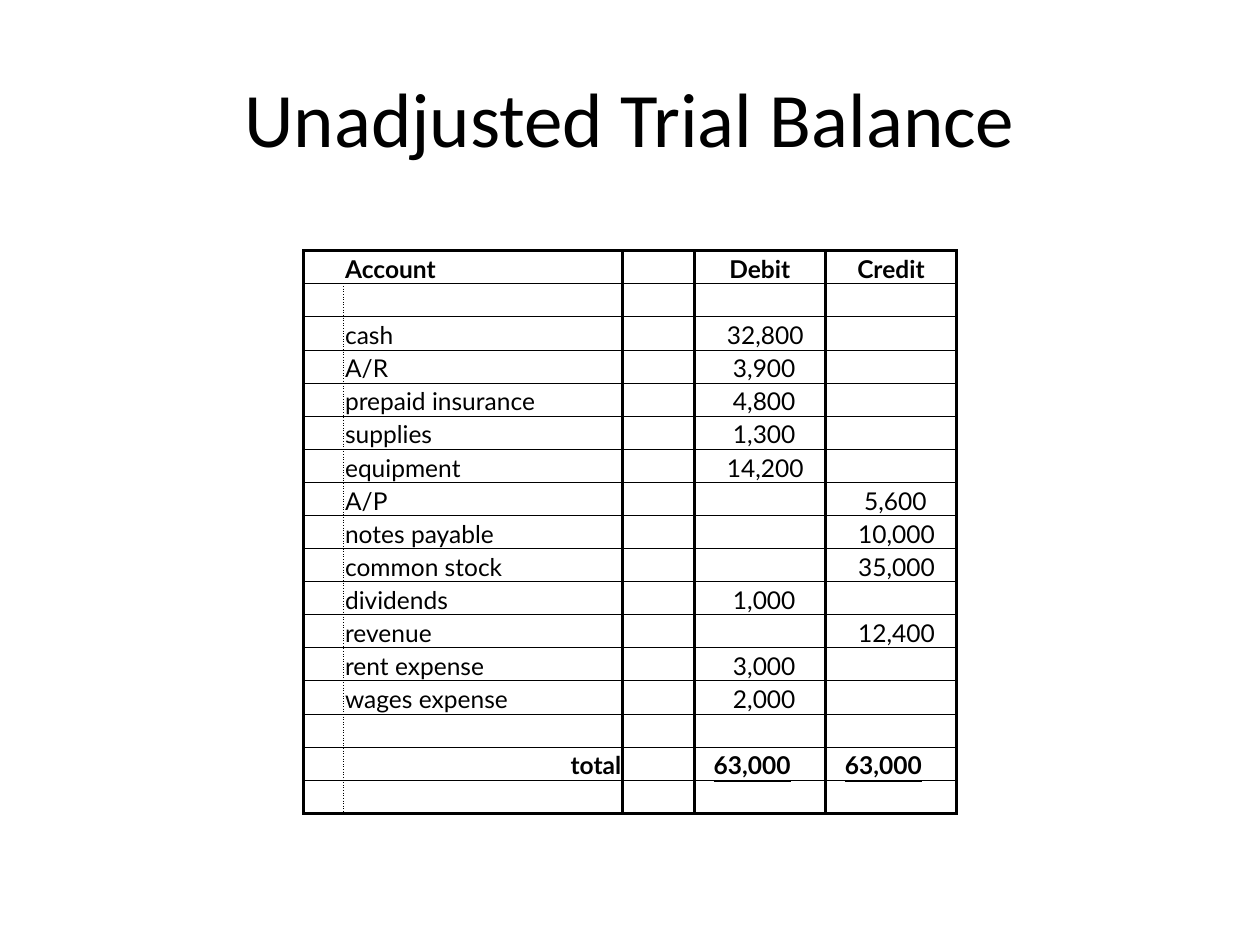
"""Build the unadjusted trial balance slide."""
import dataclasses

import lxml.etree
import pptx
import pptx.dml.color
import pptx.enum.text
import pptx.oxml.ns
import pptx.util

Pt = pptx.util.Pt
Align = pptx.enum.text.PP_ALIGN
Anchor = pptx.enum.text.MSO_ANCHOR


@dataclasses.dataclass(frozen=True)
class Theme:
    ink: str = "000000"
    head: str = "Calibri"
    body: str = "Lato"
    large: float = 44
    small: float = 14
    thick: float = 2
    thin: float = 0.5


THEME = Theme()
LEFT, TOP = 173.5, 143.25
WIDTHS = [23, 159.2, 41, 75, 75]
HEIGHT = 18.93
DEBIT, CREDIT = 3, 4
ITEMS = [
    ("cash", DEBIT, "32,800"),
    ("A/R", DEBIT, "3,900"),
    ("prepaid insurance", DEBIT, "4,800"),
    ("supplies", DEBIT, "1,300"),
    ("equipment", DEBIT, "14,200"),
    ("A/P", CREDIT, "5,600"),
    ("notes payable", CREDIT, "10,000"),
    ("common stock", CREDIT, "35,000"),
    ("dividends", DEBIT, "1,000"),
    ("revenue", CREDIT, "12,400"),
    ("rent expense", DEBIT, "3,000"),
    ("wages expense", DEBIT, "2,000"),
]
TOTAL = "63,000"
FIRST = 2
SUM = FIRST + len(ITEMS) + 1
COUNT = SUM + 2


def sub(node, tag, **attrs):
    """Add a drawing element with attributes and return it."""
    return lxml.etree.SubElement(node, pptx.oxml.ns.qn(tag), **attrs)


def write(frame, text, font=THEME.body, size=THEME.small, bold=False,
          under=False, align=Align.LEFT, indent=0):
    """Put formatted text in a frame."""
    para = frame.paragraphs[0]
    para.alignment = align
    if indent:
        para._p.get_or_add_pPr().set("marL", str(Pt(indent)))
    run = para.add_run()
    run.text = text
    run.font.name = font
    run.font.size = Pt(size)
    run.font.bold = bold
    run.font.underline = under
    run.font.color.rgb = pptx.dml.color.RGBColor.from_string(THEME.ink)


def edge(props, side, width, dash="solid"):
    """Draw one cell border, or hide it when the width is zero."""
    line = sub(props, f"a:ln{side}", w=str(Pt(width)))
    if not width:
        sub(line, "a:noFill")
        return
    fill = sub(line, "a:solidFill")
    sub(fill, "a:srgbClr", val=THEME.ink)
    sub(line, "a:prstDash", val=dash)


def frame(cell, row, col):
    """Set the borders, margins and fill of a cell."""
    props = cell._tc.get_or_add_tcPr()
    split = (THEME.thin, "dot") if row else (0,)
    bold = (THEME.thick,)
    edge(props, "L", *(split if col == 1 else bold))
    edge(props, "R", *(split if col == 0 else bold))
    edge(props, "T", THEME.thin if row else THEME.thick)
    edge(props, "B", THEME.thick if row == COUNT - 1 else THEME.thin)
    cell.fill.background()
    cell.vertical_anchor = Anchor.BOTTOM
    cell.margin_left = cell.margin_right = cell.margin_top = Pt(0.7)
    cell.margin_bottom = 0


def ledger(slide):
    """Add the ruled table and return it."""
    shape = slide.shapes.add_table(
        COUNT, len(WIDTHS), Pt(LEFT), Pt(TOP), Pt(sum(WIDTHS)),
        Pt(HEIGHT * COUNT))
    table = shape.table
    table.first_row = table.horz_banding = False
    for col, width in zip(table.columns, WIDTHS):
        col.width = Pt(width)
    for r, row in enumerate(table.rows):
        row.height = Pt(HEIGHT)
        for c, cell in enumerate(row.cells):
            frame(cell, r, c)
    return table


def fill(table):
    """Write the heads, accounts and totals."""
    def put(row, col, text, **form):
        write(table.cell(row, col).text_frame, text, **form)

    put(0, 1, "Account", bold=True)
    for col, text in ((DEBIT, "Debit"), (CREDIT, "Credit")):
        put(0, col, text, bold=True, align=Align.CENTER)
        put(SUM, col, TOTAL, bold=True, under=True, indent=10.5)
    for row, (name, col, value) in enumerate(ITEMS, FIRST):
        put(row, 1, name)
        put(row, col, value, indent=18 if len(value) > 5 else 21.5)
    put(SUM, 1, "total", bold=True, align=Align.RIGHT)


def shrink(table):
    """Give empty cells the body size so that rows keep their height."""
    for cell in table.iter_cells():
        if not cell.text:
            para = cell.text_frame.paragraphs[0]
            sub(para._p, "a:endParaRPr", sz=str(int(THEME.small * 100)))


def title(slide, text):
    """Add the centred slide title."""
    box = slide.shapes.add_textbox(Pt(36), Pt(21.6), Pt(648), Pt(90))
    box.text_frame.word_wrap = True
    box.text_frame.vertical_anchor = Anchor.MIDDLE
    write(box.text_frame, text, font=THEME.head, size=THEME.large,
          align=Align.CENTER)


def main():
    """Build and save the slide."""
    deck = pptx.Presentation()
    deck.slide_width, deck.slide_height = Pt(720), Pt(540)
    slide = deck.slides.add_slide(deck.slide_layouts[6])
    title(slide, "Unadjusted Trial Balance")
    table = ledger(slide)
    fill(table)
    shrink(table)
    deck.save("out.pptx")


if __name__ == "__main__":
    main()
